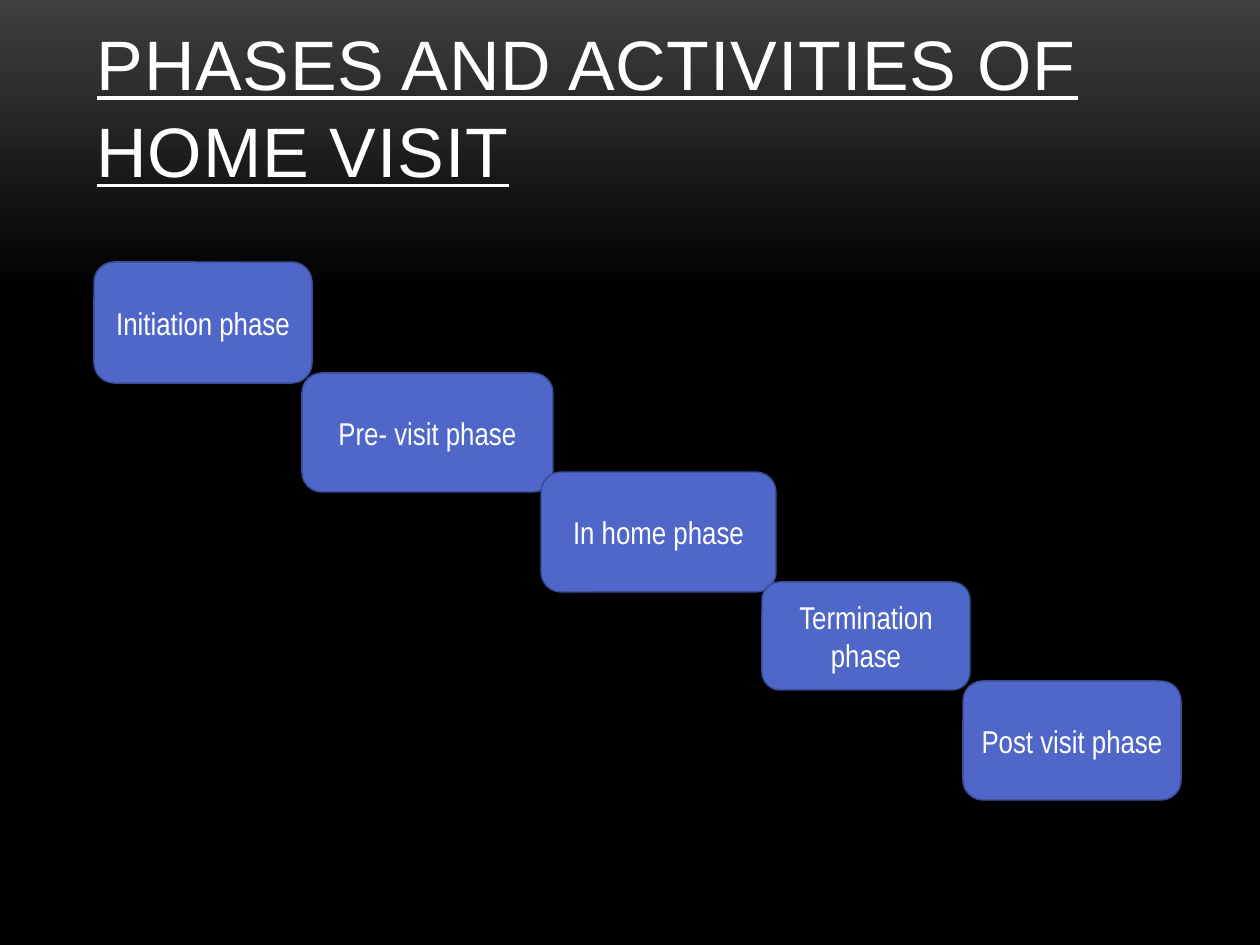
from copy import deepcopy
from pptx import Presentation
from pptx.dml.color import RGBColor
from pptx.enum.shapes import MSO_SHAPE
from pptx.enum.text import MSO_ANCHOR, MSO_AUTO_SIZE, PP_ALIGN
from pptx.util import Emu, Pt


def px(n):
    return Emu(round(n * 914400 / 126))


def rgb(value):
    return RGBColor.from_string(value)


prs = Presentation()
prs.slide_width, prs.slide_height = px(1260), px(945)
s = prs.slides.add_slide(prs.slide_layouts[5])

fill = s.background.fill
fill.gradient()
fill.gradient_angle = 270
top, black = fill.gradient_stops
top.position, black.position = 0, 1
top.color.rgb, black.color.rgb = rgb("3F3F3F"), rgb("000000")
stops = s.element.xpath(".//a:gs")
middle = deepcopy(stops[1])
middle.set("pos", "31000")
stops[0].addnext(middle)

title = s.shapes.title
title.left, title.top, title.width, title.height = px(84), px(38), px(1092), px(157)
tf = title.text_frame
tf.word_wrap = True
tf.auto_size = MSO_AUTO_SIZE.NONE
tf.vertical_anchor = MSO_ANCHOR.BOTTOM
tf.margin_bottom = px(3)
p = tf.paragraphs[0]
p.alignment = PP_ALIGN.LEFT
p.line_spacing = 1.04
r = p.add_run()
r.text = "PHASES AND ACTIVITIES OF HOME VISIT"
r.font.name = "Arial"
r.font.size = Pt(40)
r.font.underline = True
r.font.color.rgb = rgb("FFFFFF")
r.font._element.set("spc", "50")

phases = [
    ("Initiation phase", 94, 262, 218, 121),
    ("Pre- visit phase", 302, 373, 251, 119),
    ("In home phase", 541, 472, 235, 120),
    ("Termination phase", 762, 582, 208, 108),
    ("Post visit phase", 963, 681, 218, 119),
]
for text, x, y, w, h in phases:
    sp = s.shapes.add_shape(MSO_SHAPE.ROUNDED_RECTANGLE, px(x), px(y), px(w), px(h))
    sp.shadow.inherit = False
    sp.fill.solid()
    sp.fill.fore_color.rgb = rgb("4E67C8")
    sp.line.color.rgb = rgb("3A4C94")
    sp.line.width = Pt(0.85)
    tf = sp.text_frame
    tf.word_wrap = True
    tf.vertical_anchor = MSO_ANCHOR.MIDDLE
    p = tf.paragraphs[0]
    p.text = text
    p.alignment = PP_ALIGN.CENTER
    p.font.name = "Arial Narrow"
    p.font.size = Pt(18)
    p.font.color.rgb = rgb("FFFFFF")

prs.save("out.pptx")
